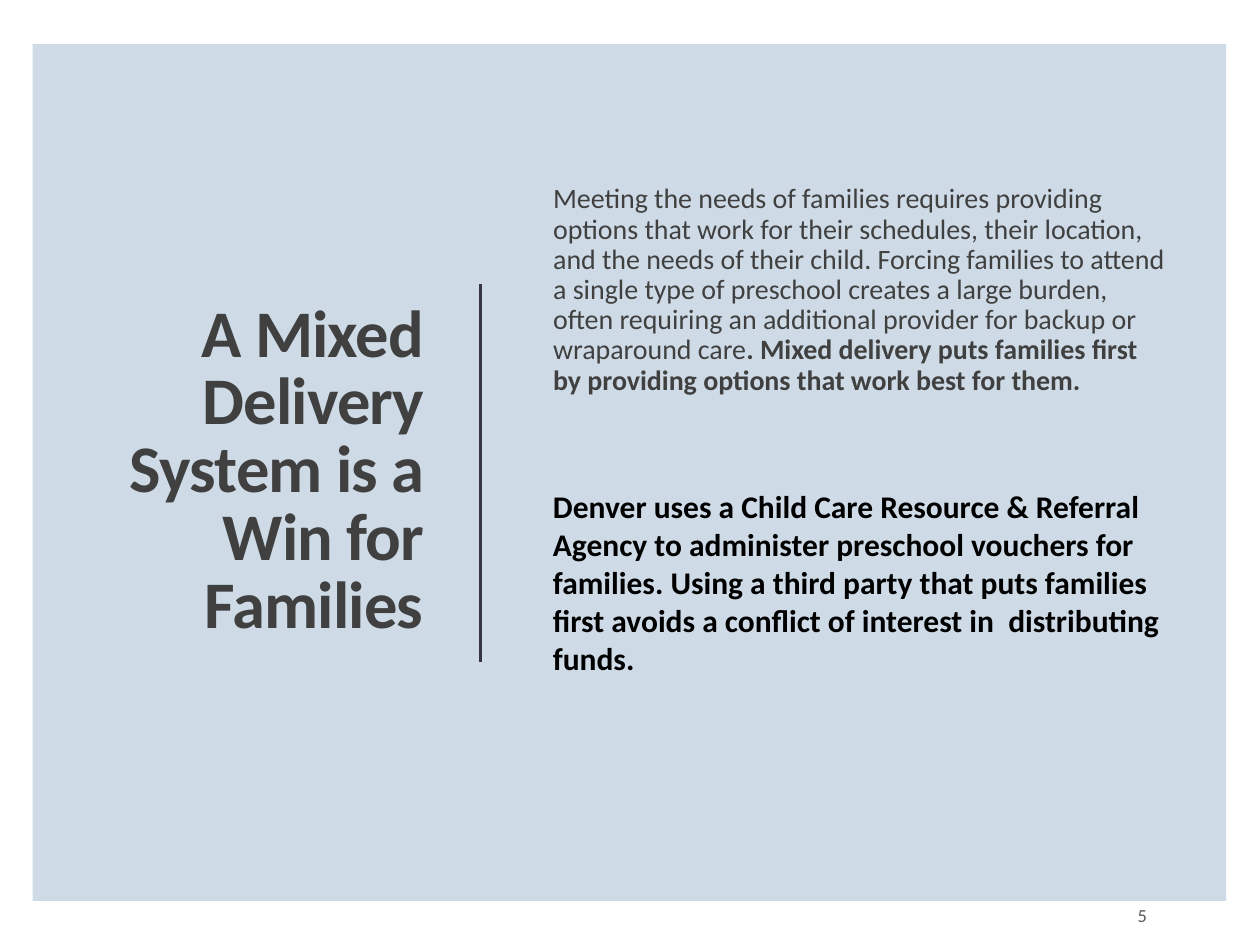
from dataclasses import dataclass

from pptx import Presentation
from pptx.dml.color import RGBColor
from pptx.enum.shapes import MSO_CONNECTOR, MSO_SHAPE
from pptx.enum.text import MSO_ANCHOR, MSO_AUTO_SIZE, PP_ALIGN
from pptx.oxml.ns import qn
from pptx.util import Pt


@dataclass
class Box:
    left: float
    top: float
    width: float
    height: float


@dataclass
class Run:
    text: str
    bold: bool = False


FONT = "Calibri"
DARK_GRAY = "404040"

PANEL_BOX = Box(18.7, 25.2, 682, 489.6)
TITLE_BOX = Box(56.9, 75.6, 192.2, 388.8)
BODY_BOX = Box(308.9, 84.2, 357.1, 182.9)
CALLOUT_BOX = Box(308.9, 275, 362.2, 116.6)
NUMBER_BOX = Box(584.6, 508.3, 77.8, 28.8)


def color(value: str) -> RGBColor:
    return RGBColor.from_string(value)


def place(shape, box: Box) -> None:
    shape.left, shape.top = Pt(box.left), Pt(box.top)
    shape.width, shape.height = Pt(box.width), Pt(box.height)


def add_text_box(slide, box: Box):
    return slide.shapes.add_textbox(Pt(box.left), Pt(box.top), Pt(box.width), Pt(box.height))


def write_text(shape, runs: list[Run], *, size: float, fill: str = DARK_GRAY,
               align=PP_ALIGN.LEFT, anchor=MSO_ANCHOR.TOP, line_spacing: float = 1.0,
               tracking: float = 0, margins=(7.2, 3.6, 7.2, 3.6), indent: float = 0) -> None:
    frame = shape.text_frame
    frame.word_wrap = True
    frame.auto_size = MSO_AUTO_SIZE.NONE
    frame.vertical_anchor = anchor
    (frame.margin_left, frame.margin_top,
     frame.margin_right, frame.margin_bottom) = map(Pt, margins)

    paragraph = frame.paragraphs[0]
    paragraph.alignment = align
    paragraph.line_spacing = line_spacing
    paragraph.space_before = paragraph.space_after = Pt(0)
    properties = paragraph._p.get_or_add_pPr()
    properties.set("marL", str(Pt(indent)))
    properties.set("indent", "0")
    properties.append(properties.makeelement(qn("a:buNone"), {}))

    for item in runs:
        run = paragraph.add_run()
        run.text = item.text
        run.font.name = FONT
        run.font.size = Pt(size)
        run.font.bold = item.bold
        run.font.color.rgb = color(fill)
        if tracking:
            run._r.get_or_add_rPr().set("spc", str(round(tracking * 100)))


def add_panel(slide, box: Box, fill: str) -> None:
    panel = slide.shapes.add_shape(MSO_SHAPE.RECTANGLE, Pt(box.left), Pt(box.top),
                                   Pt(box.width), Pt(box.height))
    panel.shadow.inherit = False
    panel.fill.solid()
    panel.fill.fore_color.rgb = color(fill)
    panel.line.fill.background()
    # Send the panel behind the placeholders
    panel.element.getparent().insert(2, panel.element)


def add_divider(slide, x: float, top: float, bottom: float) -> None:
    divider = slide.shapes.add_connector(MSO_CONNECTOR.STRAIGHT, Pt(x), Pt(top), Pt(x), Pt(bottom))
    divider.line.color.rgb = color("373545")
    divider.line.width = Pt(1.5)
    properties = divider.element.spPr
    properties.append(properties.makeelement(qn("a:effectLst"), {}))


def main() -> None:
    presentation = Presentation()
    presentation.slide_width, presentation.slide_height = Pt(720), Pt(540)
    slide = presentation.slides.add_slide(presentation.slide_layouts[1])
    slide.background.fill.solid()
    slide.background.fill.fore_color.rgb = color("FFFFFF")

    add_panel(slide, PANEL_BOX, "CEDBE6")

    # Title and divider
    title = slide.shapes.title
    place(title, TITLE_BOX)
    write_text(title, [Run("A Mixed Delivery System is a Win for Families", bold=True)],
               size=38, align=PP_ALIGN.RIGHT, anchor=MSO_ANCHOR.MIDDLE,
               line_spacing=0.85, tracking=-0.5)
    add_divider(slide, x=274.5, top=162, bottom=378)

    # Main argument
    body = slide.placeholders[1]
    place(body, BODY_BOX)
    write_text(body, [
        Run("Meeting the needs of families requires providing options that work for their "
            "schedules, their location, and the needs of their child. Forcing families to "
            "attend a single type of preschool creates a large burden, often requiring an "
            "additional provider for backup or wraparound care"),
        Run(". Mixed delivery puts families first by providing options that work best "
            "for them.", bold=True),
    ], size=16, line_spacing=0.9, margins=(0, 21.4, 0, 3.6), indent=7.2)

    # Local example
    write_text(add_text_box(slide, CALLOUT_BOX), [
        Run("Denver uses a Child Care Resource & Referral Agency to administer preschool "
            "vouchers for families. Using a third party that puts families first avoids a "
            "conflict of interest in  distributing funds.", bold=True),
    ], size=18, fill="000000")

    # Slide number
    write_text(add_text_box(slide, NUMBER_BOX), [Run("5")], size=10.5, fill="595959",
               align=PP_ALIGN.RIGHT, anchor=MSO_ANCHOR.MIDDLE)

    presentation.save("out.pptx")


if __name__ == "__main__":
    main()
